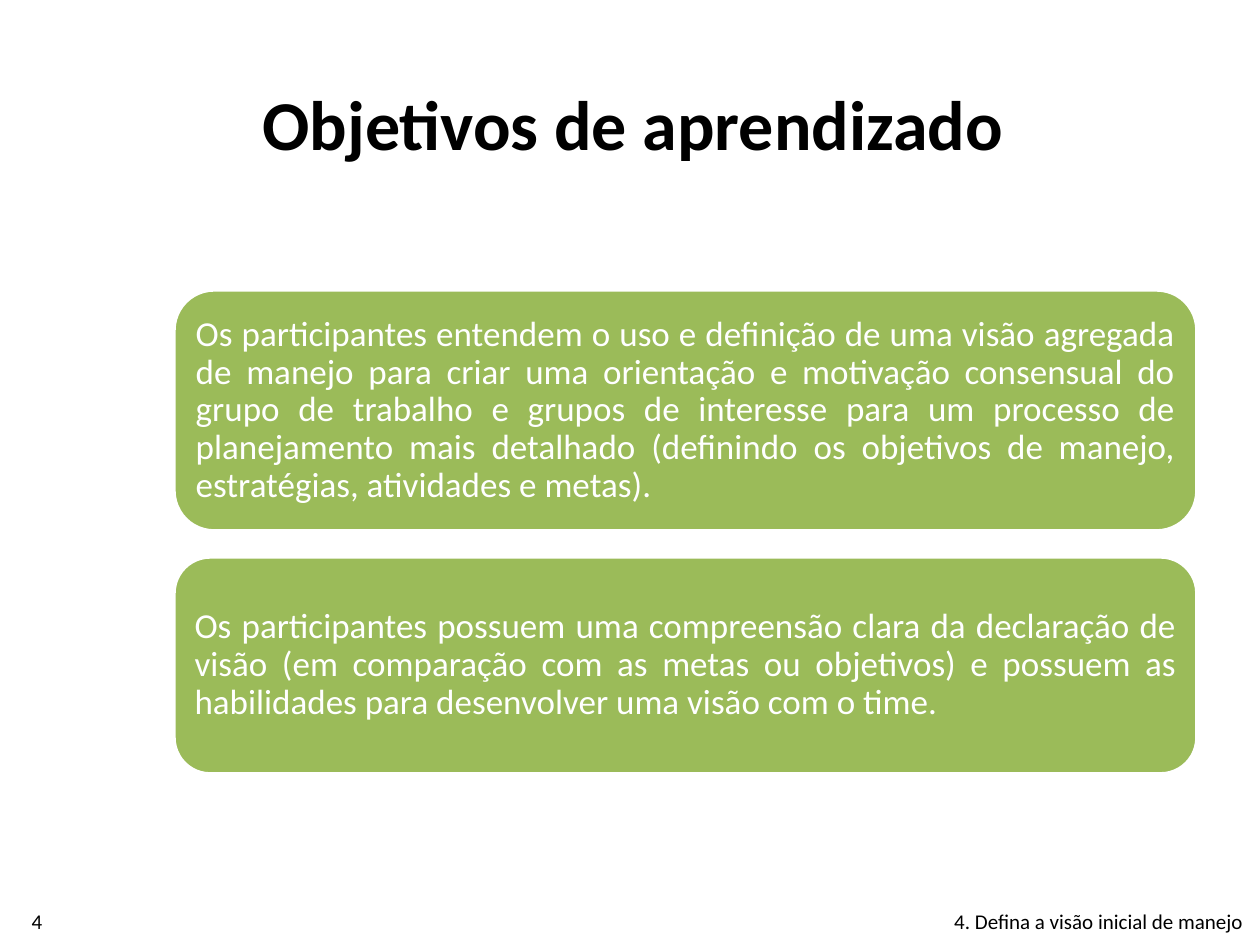
from dataclasses import dataclass

from pptx import Presentation
from pptx.dml.color import RGBColor
from pptx.enum.shapes import MSO_SHAPE
from pptx.enum.text import MSO_ANCHOR, PP_ALIGN
from pptx.util import Emu, Pt

ROUNDED = MSO_SHAPE.ROUNDED_RECTANGLE
MIDDLE = MSO_ANCHOR.MIDDLE
LEFT, CENTER, RIGHT, JUSTIFY = PP_ALIGN.LEFT, PP_ALIGN.CENTER, PP_ALIGN.RIGHT, PP_ALIGN.JUSTIFY

PX_PER_INCH = 126
FONT = "Calibri"
BLACK, WHITE, GREEN = "000000", "FFFFFF", "9BBB59"
CARD_LEFT, CARD_WIDTH, CARD_INSET = 174, 1023, 10


@dataclass
class Label:
    text: str
    left: int
    top: int
    width: int
    height: int
    size: int
    align: PP_ALIGN
    bold: bool = False


@dataclass
class Card:
    text: str
    top: int
    height: int


LABELS = [
    Label("Objetivos de aprendizado", 179, 48, 908, 149, 40, CENTER, True),
    Label("4", -1, 897, 76, 48, 12, CENTER),
    Label("4. Defina a visão inicial de manejo ", 520, 897, 740, 48, 12, RIGHT),
]

CARDS = [
    Card("Os participantes entendem o uso e definição de uma visão agregada de manejo "
         "para criar uma orientação e motivação consensual do grupo de trabalho e grupos "
         "de interesse para um processo de planejamento mais detalhado (definindo os "
         "objetivos de manejo, estratégias, atividades e metas).", 290, 241),
    Card("Os participantes possuem uma compreensão clara da declaração de visão (em "
         "comparação com as metas ou objetivos) e possuem as habilidades para desenvolver "
         "uma visão com o time.", 557, 217),
]


def px(length: int) -> Emu:
    return Emu(round(length * 914400 / PX_PER_INCH))


def color(value: str) -> RGBColor:
    return RGBColor.from_string(value)


def write(box, text: str, size: int, align: PP_ALIGN, fill: str, bold: bool = False):
    """Fill a box with one vertically centred paragraph."""
    frame = box.text_frame
    frame.word_wrap = True
    frame.vertical_anchor = MIDDLE
    para = frame.paragraphs[0]
    para.alignment = align
    span = para.add_run()
    span.text = text
    span.font.name = FONT
    span.font.size = Pt(size)
    span.font.bold = bold
    span.font.color.rgb = color(fill)
    return para


def draw_label(page, label: Label) -> None:
    box = page.shapes.add_textbox(px(label.left), px(label.top), px(label.width), px(label.height))
    write(box, label.text, label.size, label.align, BLACK, label.bold)


def draw_card(page, card: Card) -> None:
    box = page.shapes.add_shape(ROUNDED, px(CARD_LEFT), px(card.top), px(CARD_WIDTH), px(card.height))
    box.shadow.inherit = False
    box.fill.solid()
    box.fill.fore_color.rgb = color(GREEN)
    box.line.color.rgb = color(WHITE)
    box.line.width = Pt(2)
    frame = box.text_frame
    frame.margin_left = frame.margin_right = px(CARD_INSET)
    frame.margin_top = frame.margin_bottom = px(CARD_INSET)
    para = write(box, card.text, 20, JUSTIFY, WHITE)
    para.line_spacing = 0.9


def main() -> None:
    deck = Presentation()
    deck.slide_width, deck.slide_height = px(1260), px(945)
    page = deck.slides.add_slide(deck.slide_layouts[6])

    # Title, page number and footer
    for label in LABELS:
        draw_label(page, label)

    # Learning goals
    for card in CARDS:
        draw_card(page, card)

    deck.save("out.pptx")


if __name__ == "__main__":
    main()
